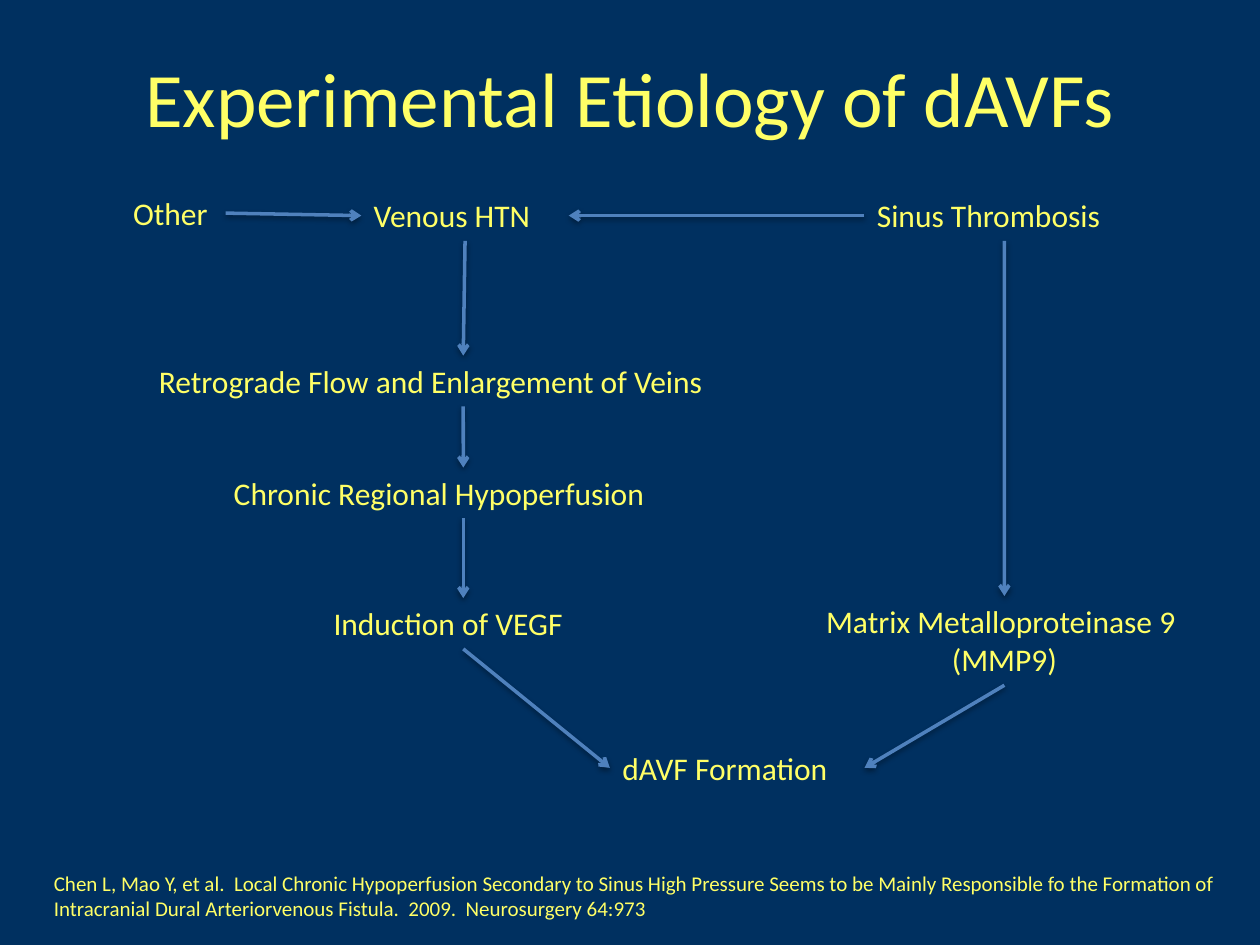
from lxml import etree
from pptx import Presentation
from pptx.dml.color import RGBColor
from pptx.enum.shapes import MSO_CONNECTOR
from pptx.enum.text import MSO_ANCHOR, MSO_AUTO_SIZE, PP_ALIGN
from pptx.oxml import parse_xml
from pptx.oxml.ns import qn
from pptx.util import Pt

LEFT, CENTER = PP_ALIGN.LEFT, PP_ALIGN.CENTER
MIDDLE = MSO_ANCHOR.MIDDLE
GROW = MSO_AUTO_SIZE.SHAPE_TO_FIT_TEXT
STRAIGHT = MSO_CONNECTOR.STRAIGHT
TOP_SIDE, LEFT_SIDE, BOTTOM_SIDE, RIGHT_SIDE = range(4)

NAVY, YELLOW, BLUE = "003060", "FFFF66", "4F81BD"
FONT = "Calibri"

TITLE = "Experimental Etiology of dAVFs"
CITE = (
    "Chen L, Mao Y, et al.  Local Chronic Hypoperfusion Secondary to Sinus High "
    "Pressure Seems to be Mainly Responsible fo the Formation of Intracranial "
    "Dural Arteriorvenous Fistula.  2009.  Neurosurgery 64:973"
)

# key: (lines, left, top, width, height)
NODES = {
    "other": (["Other"], 69, 107.3, 60, 29),
    "htn": (["Venous HTN"], 206.5, 108.7, 118.5, 29),
    "sinus": (["Sinus Thrombosis"], 494, 108.7, 160, 29),
    "flow": (["Retrograde Flow and Enlargement of Veins"], 83.7, 203.2, 362, 29),
    "hypo": (["Chronic Regional Hypoperfusion"], 126.5, 267.2, 276.5, 29),
    "vegf": (["Induction of VEGF"], 183.5, 341.8, 162.5, 29),
    "mmp": (["Matrix Metalloproteinase 9 ", "(MMP9)"], 460.2, 340.6, 227.5, 51),
    "davf": (["dAVF Formation"], 348.5, 424.3, 145.5, 29),
}

# (from, side, to, side)
ARROWS = [
    ("other", RIGHT_SIDE, "htn", LEFT_SIDE),
    ("sinus", LEFT_SIDE, "htn", RIGHT_SIDE),
    ("sinus", BOTTOM_SIDE, "mmp", TOP_SIDE),
    ("htn", BOTTOM_SIDE, "flow", TOP_SIDE),
    ("flow", BOTTOM_SIDE, "hypo", TOP_SIDE),
    ("hypo", BOTTOM_SIDE, "vegf", TOP_SIDE),
    ("vegf", BOTTOM_SIDE, "davf", LEFT_SIDE),
    ("mmp", BOTTOM_SIDE, "davf", RIGHT_SIDE),
]

SHADOW = (
    '<a:effectLst xmlns:a="http://schemas.openxmlformats.org/drawingml/2006/main">'
    '<a:outerShdw blurRad="40000" dist="20000" dir="5400000" rotWithShape="0">'
    '<a:srgbClr val="000000"><a:alpha val="38000"/></a:srgbClr>'
    "</a:outerShdw></a:effectLst>"
)


def rgb(code):
    return RGBColor.from_string(code)


def write(frame, lines, size, align):
    """Fill a text frame with one paragraph per line."""
    for i, line in enumerate(lines):
        para = frame.add_paragraph() if i else frame.paragraphs[0]
        para.alignment = align
        run = para.add_run()
        run.text = line
        for name, value in {"name": FONT, "size": Pt(size)}.items():
            setattr(run.font, name, value)
        run.font.color.rgb = rgb(YELLOW)


def add_text(slide, lines, place, size, wrap):
    box = slide.shapes.add_textbox(*map(Pt, place))
    frame = box.text_frame
    frame.word_wrap = wrap
    frame.auto_size = GROW
    write(frame, lines, size, CENTER if len(lines) > 1 else LEFT)
    return box


def add_arrow(slide, start, side, end, side2):
    link = slide.shapes.add_connector(STRAIGHT, 0, 0, 0, 0)
    link.begin_connect(start, side)
    link.end_connect(end, side2)
    link.line.color.rgb = rgb(BLUE)
    link.line.width = Pt(2)
    etree.SubElement(link.line._get_or_add_ln(), qn("a:tailEnd"), type="arrow")
    link._element.spPr.append(parse_xml(SHADOW))


def main():
    deck = Presentation()
    deck.slide_width, deck.slide_height = Pt(720), Pt(540)
    slide = deck.slides.add_slide(deck.slide_layouts[5])
    fill = slide.background.fill
    fill.solid()
    fill.fore_color.rgb = rgb(NAVY)

    title = slide.shapes.title
    place = {"left": 36, "top": 21.6, "width": 648, "height": 67.7}
    for name, value in place.items():
        setattr(title, name, Pt(value))
    title.text_frame.vertical_anchor = MIDDLE
    write(title.text_frame, [TITLE], 44, CENTER)

    boxes = {
        key: add_text(slide, lines, place, 18, False)
        for key, (lines, *place) in NODES.items()
    }
    for start, side, end, side2 in ARROWS:
        add_arrow(slide, boxes[start], side, boxes[end], side2)
    add_text(slide, [CITE], (23.7, 493.9, 681, 36), 12, True)

    deck.save("out.pptx")


if __name__ == "__main__":
    main()
